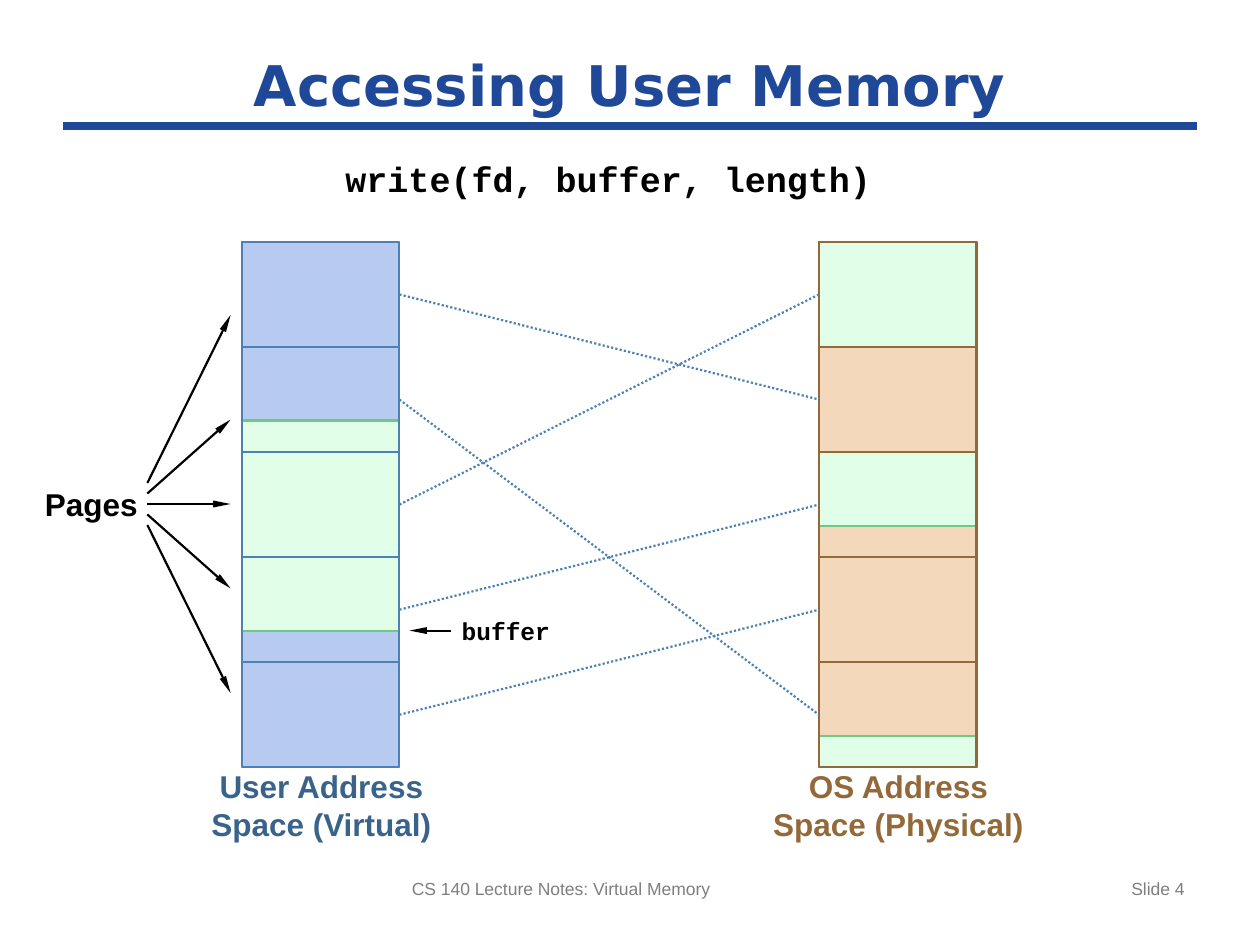
from lxml import etree
from pptx import Presentation
from pptx.dml.color import RGBColor
from pptx.enum.dml import MSO_LINE
from pptx.enum.shapes import MSO_CONNECTOR, MSO_SHAPE
from pptx.enum.text import MSO_ANCHOR, PP_ALIGN
from pptx.oxml.ns import qn
from pptx.util import Inches, Pt

STRAIGHT = MSO_CONNECTOR.STRAIGHT
RECT = MSO_SHAPE.RECTANGLE
DOTTED = MSO_LINE.ROUND_DOT
LEFT, CENTER, RIGHT = PP_ALIGN.LEFT, PP_ALIGN.CENTER, PP_ALIGN.RIGHT
MIDDLE = MSO_ANCHOR.MIDDLE
LEFT_SIDE, RIGHT_SIDE = 1, 3

COLORS = {
    "title": "1F4899", "footer": "7F7F7F", "text": "000000",
    "user_fill": "B7CBF0", "user_line": "4D81B5", "user_text": "3A638C",
    "os_fill": "F3D8BB", "os_line": "94693A", "os_text": "94693A",
    "buffer_fill": "E1FFE8", "buffer_line": "6FC984",
}
PAGE_COUNT = 5
USER_BOX = (1.92, 1.92, 1.25, 4.17)
OS_BOX = (6.5, 1.92, 1.25, 4.17)
USER_BUFFER = [(1.7, 3.7)]
OS_BUFFER = [(0, 1), (2, 2.7), (4.7, 5)]
PAGE_MAP = [1, 4, 0, 2, 3]


def rgb(name):
    return RGBColor.from_string(COLORS[name])


def format_text(tf, text, size, color, font="Arial", bold=True, align=CENTER):
    tf.text = text
    tf.word_wrap = True
    p = tf.paragraphs[0]
    p.alignment = align
    for r in p.runs:
        r.font.name = font
        r.font.size = Pt(size)
        r.font.bold = bold
        r.font.color.rgb = rgb(color)


def add_label(s, box, text, size, color, font="Arial"):
    tf = s.shapes.add_textbox(*map(Inches, box)).text_frame
    tf.margin_left = tf.margin_right = tf.margin_top = tf.margin_bottom = 0
    format_text(tf, text, size, color, font)


def add_line(s, start, end, color, width=1.25, dash=None, arrow=False):
    line = s.shapes.add_connector(STRAIGHT, *map(Inches, (*start, *end)))
    line.line.color.rgb = rgb(color)
    line.line.width = Pt(width)
    if dash:
        line.line.dash_style = dash
    if arrow:
        etree.SubElement(line.line._get_or_add_ln(), qn("a:tailEnd"),
                         type="triangle", w="sm", len="lg")
    etree.SubElement(line._element.spPr, qn("a:effectLst"))
    return line


def add_rect(s, box, line, fill=None):
    sp = s.shapes.add_shape(RECT, *map(Inches, box))
    sp.shadow.inherit = False
    if fill:
        sp.fill.solid()
        sp.fill.fore_color.rgb = rgb(fill)
    else:
        sp.fill.background()
    sp.line.color.rgb = rgb(line)
    sp.line.width = Pt(1.25)
    return sp


def add_title(s, box, text):
    left, top, width, height = box
    title = s.shapes.title
    title.left, title.top, title.width, title.height = map(Inches, box)
    title.text_frame.vertical_anchor = MIDDLE
    format_text(title.text_frame, text, 32, "title", "DejaVu Sans")
    bottom = top + height
    add_line(s, (left, bottom), (left + width, bottom), "title", 4.5)


def add_footer(s, box):
    left, top, width, height = box
    right_width = 2.33
    parts = [
        (left, 3.75, "CS 140 Lecture Notes: Virtual Memory", LEFT),
        (left + width - right_width, right_width, "Slide 4", RIGHT),
    ]
    for x, w, text, align in parts:
        sp = s.shapes.add_textbox(*map(Inches, (x, top, w, height)))
        format_text(sp.text_frame, text, 10, "footer", bold=False, align=align)


def add_address_space(s, box, owner, buffer_parts, label):
    left, top, width, height = box
    page = height / PAGE_COUNT
    line = f"{owner}_line"
    add_rect(s, box, line, f"{owner}_fill")
    parts = [
        add_rect(s, (left, top + first * page, width, (last - first) * page),
                 "buffer_line", "buffer_fill")
        for first, last in buffer_parts
    ]
    for i in range(1, PAGE_COUNT):
        y = top + i * page
        add_line(s, (left, y), (left + width, y), line)
    frame = add_rect(s, box, line)
    add_label(s, (left - 0.58, top + height, 2.42, 0.6), label, 18, f"{owner}_text")
    return [frame, *parts]


def page_middle(box, index):
    return box[1] + (index + 0.5) * box[3] / PAGE_COUNT


def shape_at(shapes, y):
    for sp in shapes:
        if abs(sp.top + sp.height / 2 - Inches(y)) < Inches(0.01):
            return sp
    return None


def add_page_map(s, user_box, os_box, user_shapes, os_shapes):
    for user_page, os_page in enumerate(PAGE_MAP):
        y1 = page_middle(user_box, user_page)
        y2 = page_middle(os_box, os_page)
        line = add_line(s, (user_box[0] + user_box[2], y1), (os_box[0], y2),
                        "user_line", dash=DOTTED)
        source, target = shape_at(user_shapes, y1), shape_at(os_shapes, y2)
        if source:
            line.begin_connect(source, RIGHT_SIDE)
        if target:
            line.end_connect(target, LEFT_SIDE)


def add_pages_callout(s, box):
    left, top, width, height = box
    middle = top + height / 2
    add_label(s, (left, middle - 0.15, 0.75, 0.3), "Pages", 18, "text")
    for i, rise in enumerate([-1.5, -0.67, 0, 0.67, 1.5]):
        start = (left + 0.82, middle + (i - 2) / 12)
        add_line(s, start, (left + width, middle + rise), "text", arrow=True)


def add_buffer_callout(s, box):
    left, top, width, height = box
    middle = top + height / 2
    add_line(s, (left + 0.33, middle), (left, middle), "text", arrow=True)
    add_label(s, (left + 0.39, top, width - 0.39, height), "buffer", 14, "text",
              "Courier New")


def main():
    prs = Presentation()
    prs.slide_width, prs.slide_height = Inches(10), Inches(7.5)
    s = prs.slides.add_slide(prs.slide_layouts[5])
    add_title(s, (0.5, 0.33, 9, 0.67), "Accessing User Memory")
    add_label(s, (2.58, 1.25, 4.5, 0.33), "write(fd, buffer, length)", 20, "text",
              "Courier New")
    user = add_address_space(s, USER_BOX, "user", USER_BUFFER,
                             "User Address\vSpace (Virtual)")
    physical = add_address_space(s, OS_BOX, "os", OS_BUFFER,
                                 "OS Address\vSpace (Physical)")
    add_page_map(s, USER_BOX, OS_BOX, user, physical)
    add_pages_callout(s, (0.35, 2.5, 1.48, 3))
    add_buffer_callout(s, (3.25, 4.89, 1.14, 0.23))
    add_footer(s, (3.17, 6.92, 6.33, 0.43))
    prs.save("out.pptx")


if __name__ == "__main__":
    main()
